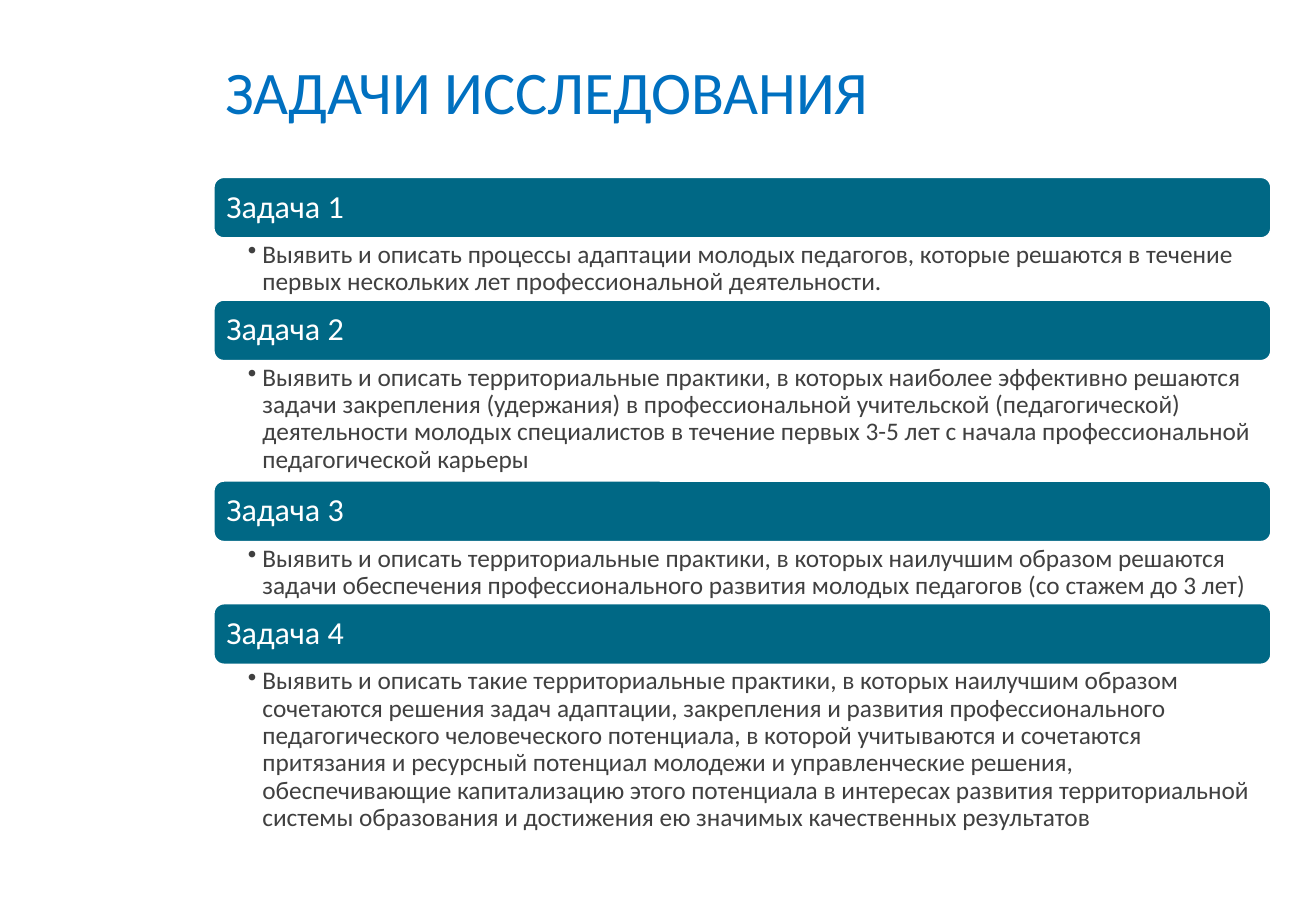
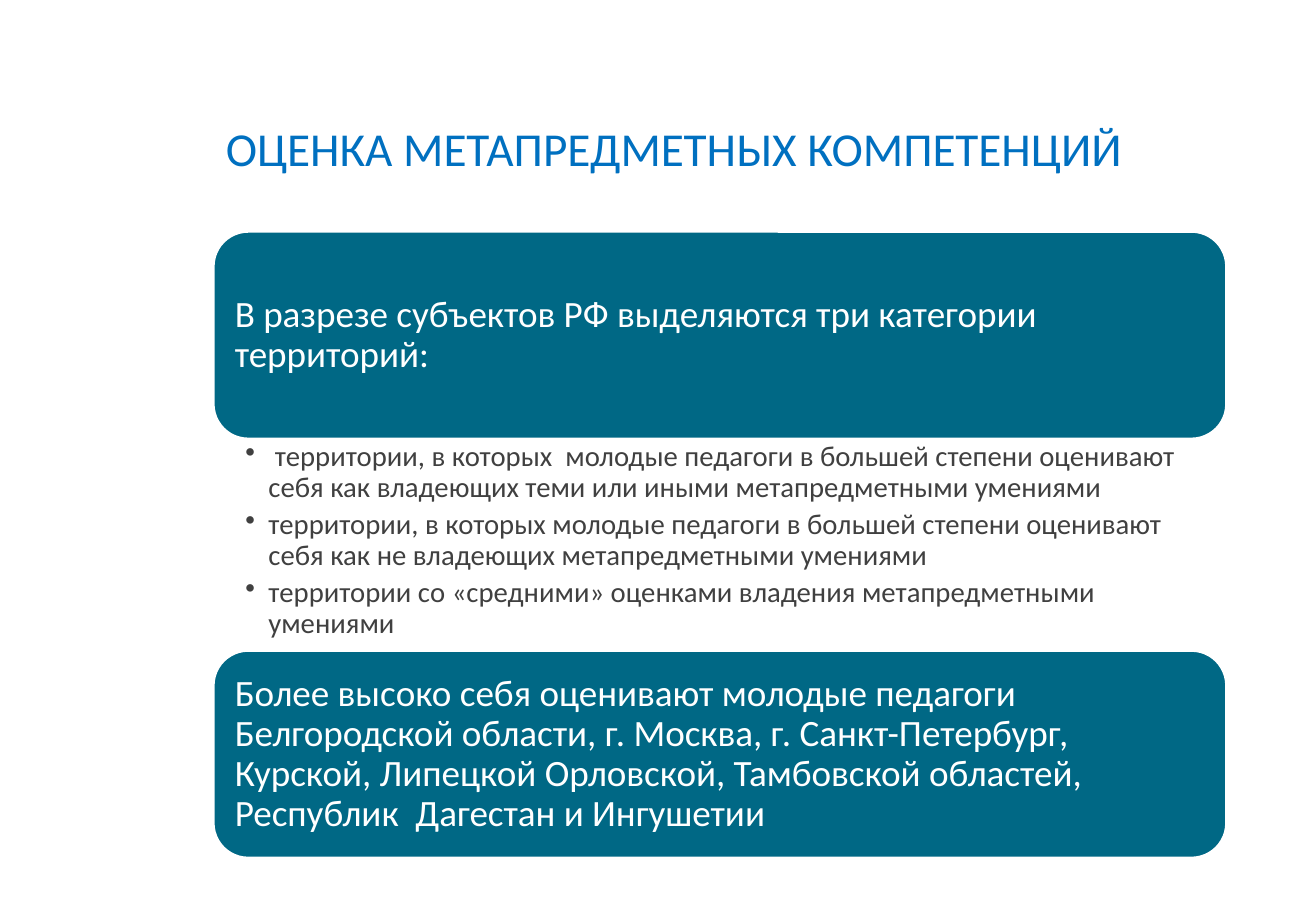
"""Build two slides on research tasks and the assessment of young teachers."""
from dataclasses import dataclass

from lxml import etree
from pptx import Presentation
from pptx import util as u
from pptx.dml.color import RGBColor
from pptx.enum import shapes, text
from pptx.oxml import ns

FONT = "Calibri"
TITLE_BLUE = RGBColor(0x00, 0x70, 0xC0)
BAND_TEAL = RGBColor(0x00, 0x68, 0x85)
WHITE = RGBColor(0xFF, 0xFF, 0xFF)
BODY_GRAY = RGBColor(0x40, 0x40, 0x40)
LEFT = u.Inches(1.76)
TITLE_TOP = u.Inches(0.42)
TITLE_WIDTH = u.Inches(8.33)


@dataclass(frozen=True)
class Section:
    """A heading band and the bullets below it."""
    heading: str
    bullets: tuple[str, ...] = ()
    bullets_height: float = 0


@dataclass(frozen=True)
class Style:
    """Measures of a stack of sections, in inches and points."""
    width: float
    band_height: float
    band_inset: float
    heading_size: float
    bullet_size: float
    bullet_left: float
    bullet_right: float
    hanging: float


@dataclass(frozen=True)
class Page:
    """The content of one slide."""
    title: str
    title_size: float
    title_height: float
    stack_top: float
    style: Style
    sections: tuple[Section, ...]


PAGES = (
    Page("ЗАДАЧИ ИССЛЕДОВАНИЯ", 35.8, 0.67, 1.46,
         Style(8.7, 0.5, 0.08, 19, 15, 0.28, 0.15, 0.12), (
             Section("Задача 1", (
                 "Выявить и описать процессы адаптации молодых педагогов, которые решаются "
                 "в течение первых нескольких лет профессиональной деятельности.",), 0.51),
             Section("Задача 2", (
                 "Выявить и описать территориальные практики, в которых наиболее эффективно "
                 "решаются задачи закрепления (удержания) в профессиональной учительской "
                 "(педагогической) деятельности молодых специалистов в течение первых 3-5 лет "
                 "с начала профессиональной педагогической карьеры",), 0.99),
             Section("Задача 3", (
                 "Выявить и описать территориальные практики, в которых наилучшим образом "
                 "решаются задачи обеспечения профессионального развития молодых педагогов "
                 "(со стажем до 3 лет)",), 0.51),
             Section("Задача 4", (
                 "Выявить и описать такие территориальные практики, в которых наилучшим "
                 "образом сочетаются решения задач адаптации, закрепления и развития "
                 "профессионального педагогического человеческого потенциала, в которой "
                 "учитываются и сочетаются притязания и ресурсный потенциал молодежи и "
                 "управленческие решения, обеспечивающие капитализацию этого потенциала в "
                 "интересах развития территориальной системы образования и достижения ею "
                 "значимых качественных результатов",), 1.46),
         )),
    Page("ОЦЕНКА МЕТАПРЕДМЕТНЫХ КОМПЕТЕНЦИЙ", 28, 1.08, 1.91,
         Style(8.33, 1.7, 0.09, 22, 17, 0.26, 0.17, 0.19), (
             Section("В разрезе субъектов РФ выделяются три категории территорий:", (
                 " территории, в которых  молодые педагоги в большей степени оценивают себя "
                 "как владеющих теми или иными метапредметными умениями",
                 "территории, в которых молодые педагоги в большей степени оценивают себя "
                 "как не владеющих метапредметными умениями",
                 "территории со «средними» оценками владения метапредметными умениями",
             ), 1.75),
             Section("Более высоко себя оценивают молодые педагоги Белгородской области, "
                     "г. Москва, г. Санкт-Петербург, Курской, Липецкой Орловской, Тамбовской "
                     "областей, Республик  Дагестан и Ингушетии"),
         )),
)


def set_frame(frame, anchor, left: float, top: float, right: float, bottom: float) -> None:
    """Set wrapping, anchor and insets of a text frame."""
    frame.word_wrap = True
    frame.vertical_anchor = anchor
    frame.margin_left, frame.margin_top = u.Inches(left), u.Inches(top)
    frame.margin_right, frame.margin_bottom = u.Inches(right), u.Inches(bottom)


def write(paragraph, wording: str, size: float, color: RGBColor, spacing: float = 0.9) -> None:
    """Fill a paragraph with one left-aligned run."""
    paragraph.alignment = text.PP_ALIGN.LEFT
    paragraph.line_spacing = spacing
    run = paragraph.add_run()
    run.text = wording
    run.font.name = FONT
    run.font.size = u.Pt(size)
    run.font.color.rgb = color


def add_bullet(paragraph, hanging: float) -> None:
    """Give a paragraph a hanging bullet."""
    paragraph.level = 1
    properties = paragraph._p.get_or_add_pPr()
    properties.set("marL", str(u.Inches(hanging)))
    properties.set("indent", str(-u.Inches(hanging)))
    etree.SubElement(properties, ns.qn("a:buChar")).set("char", "•")


def draw_title(slide, page: Page) -> None:
    """Draw the slide title."""
    title = slide.shapes.add_textbox(LEFT, TITLE_TOP, TITLE_WIDTH, u.Inches(page.title_height))
    set_frame(title.text_frame, text.MSO_ANCHOR.BOTTOM, 0.1, 0.05, 0.1, 0.05)
    write(title.text_frame.paragraphs[0], page.title, page.title_size, TITLE_BLUE, 0.85)


def draw_band(slide, heading: str, top: float, style: Style) -> None:
    """Draw a rounded heading band."""
    band = slide.shapes.add_shape(shapes.MSO_SHAPE.ROUNDED_RECTANGLE, LEFT, u.Inches(top),
                                  u.Inches(style.width), u.Inches(style.band_height))
    band.shadow.inherit = False
    band.fill.solid()
    band.fill.fore_color.rgb = BAND_TEAL
    band.line.color.rgb = WHITE
    band.line.width = u.Pt(1)
    set_frame(band.text_frame, text.MSO_ANCHOR.MIDDLE, *[style.band_inset] * 4)
    write(band.text_frame.paragraphs[0], heading, style.heading_size, WHITE)


def draw_bullets(slide, section: Section, top: float, style: Style) -> None:
    """Draw the bullets of a section."""
    box = slide.shapes.add_textbox(LEFT, u.Inches(top), u.Inches(style.width),
                                   u.Inches(section.bullets_height))
    frame = box.text_frame
    set_frame(frame, text.MSO_ANCHOR.TOP, style.bullet_left, 0.03, style.bullet_right, 0.03)
    for index, bullet in enumerate(section.bullets):
        paragraph = frame.add_paragraph() if index else frame.paragraphs[0]
        write(paragraph, bullet, style.bullet_size, BODY_GRAY)
        paragraph.space_after = u.Pt(0.2 * style.bullet_size)
        add_bullet(paragraph, style.hanging)


def draw_page(slide, page: Page) -> None:
    """Draw the title and the stacked sections of a page."""
    draw_title(slide, page)
    top = page.stack_top
    for section in page.sections:
        draw_band(slide, section.heading, top, page.style)
        top += page.style.band_height
        if section.bullets:
            draw_bullets(slide, section, top, page.style)
            top += section.bullets_height


def main() -> None:
    """Build and save the presentation."""
    presentation = Presentation()
    presentation.slide_width = u.Inches(10.83)
    presentation.slide_height = u.Inches(7.5)
    blank = presentation.slide_layouts[6]
    for page in PAGES:
        draw_page(presentation.slides.add_slide(blank), page)
    presentation.save("out.pptx")


if __name__ == "__main__":
    main()
